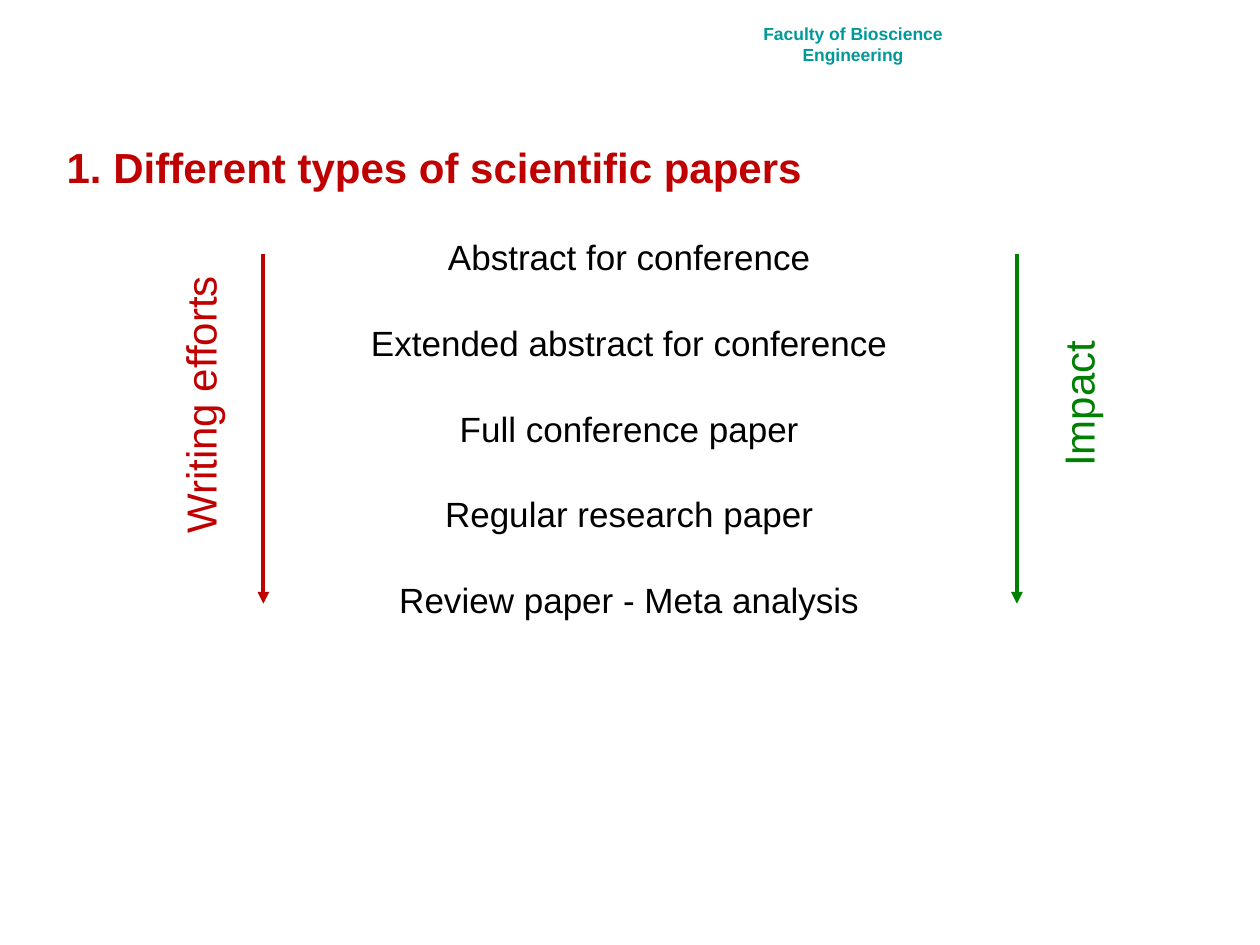
from pptx import Presentation
from pptx.dml.color import RGBColor
from pptx.enum.shapes import MSO_CONNECTOR
from pptx.enum.text import MSO_ANCHOR, MSO_AUTO_SIZE, PP_ALIGN
from pptx.oxml.ns import qn
from pptx.util import Cm, Pt
from lxml.etree import SubElement

TEAL = RGBColor(0x00, 0x99, 0x99)
RED = RGBColor(0xC0, 0x00, 0x00)
GREEN = RGBColor(0x00, 0x80, 0x00)
BLACK = RGBColor(0x00, 0x00, 0x00)

PAPER_TYPES = [
    "Abstract for conference",
    "Extended abstract for conference",
    "Full conference paper",
    "Regular research paper",
    "Review paper - Meta analysis",
]


def place(part, left, top, width, height):
    """Set the position and size of a part in centimetres."""
    part.left, part.top = Cm(left), Cm(top)
    part.width, part.height = Cm(width), Cm(height)


def style_text(frame, size, color, bold=False, align=PP_ALIGN.LEFT):
    """Give every paragraph of a text frame the same look."""
    frame.auto_size = MSO_AUTO_SIZE.NONE
    frame.vertical_anchor = MSO_ANCHOR.TOP
    for paragraph in frame.paragraphs:
        paragraph.alignment = align
        for run in paragraph.runs:
            run.font.name = "Arial"
            run.font.size = Pt(size)
            run.font.bold = bold
            run.font.color.rgb = color


def add_faculty(slide):
    """Add the faculty name at the top of the slide."""
    faculty = slide.shapes.add_textbox(Cm(14.3), Cm(0.33), Cm(5.79), Cm(1.09))
    faculty.text_frame.word_wrap = True
    faculty.text_frame.text = "Faculty of Bioscience Engineering"
    style_text(faculty.text_frame, 10, TEAL, True, PP_ALIGN.CENTER)


def fill_title(slide):
    """Fill the title placeholder."""
    title = slide.shapes.title
    place(title, 1.09, 2.72, 23.19, 1.3)
    title.text_frame.text = "1. Different types of scientific papers"
    style_text(title.text_frame, 24, RED, True)


def fill_paper_types(slide):
    """List the paper types, centred and without bullets."""
    papers = slide.placeholders[1]
    place(papers, 1.09, 4.62, 23.19, 7.93)
    frame = papers.text_frame
    frame.text = "\n".join(PAPER_TYPES)
    for index, paragraph in enumerate(frame.paragraphs):
        paragraph.space_before = Pt(25 if index else 0)
        properties = paragraph._p.get_or_add_pPr()
        properties.set("marL", "0")
        properties.set("indent", "0")
        SubElement(properties, qn("a:buNone"))
    style_text(frame, 20, BLACK, align=PP_ALIGN.CENTER)


def add_trend(slide, wording, color, arrow_x, label_x, label_width):
    """Add a downward arrow with an upright label centred on label_x."""
    arrow = slide.shapes.add_connector(
        MSO_CONNECTOR.STRAIGHT, Cm(arrow_x), Cm(5.13), Cm(arrow_x), Cm(12.17))
    arrow.line.color.rgb = color
    arrow.line.width = Pt(2.25)
    SubElement(arrow.line._get_or_add_ln(), qn("a:tailEnd"), type="triangle")
    SubElement(arrow._element.spPr, qn("a:effectLst"))

    label = slide.shapes.add_textbox(
        Cm(label_x - label_width / 2), Cm(7.49), Cm(label_width), Cm(1.27))
    label.rotation = 270
    label.text_frame.word_wrap = False
    label.text_frame.text = wording
    style_text(label.text_frame, 24, color)


def main():
    """Build the slide and save it."""
    deck = Presentation()
    deck.slide_width, deck.slide_height = Cm(25.4), Cm(19.05)
    slide = deck.slides.add_slide(deck.slide_layouts[1])
    add_faculty(slide)
    fill_title(slide)
    fill_paper_types(slide)
    add_trend(slide, "Writing efforts", RED, 5.31, 4.03, 5.77)
    add_trend(slide, "Impact", GREEN, 20.5, 21.73, 3.07)
    deck.save("out.pptx")


if __name__ == "__main__":
    main()
